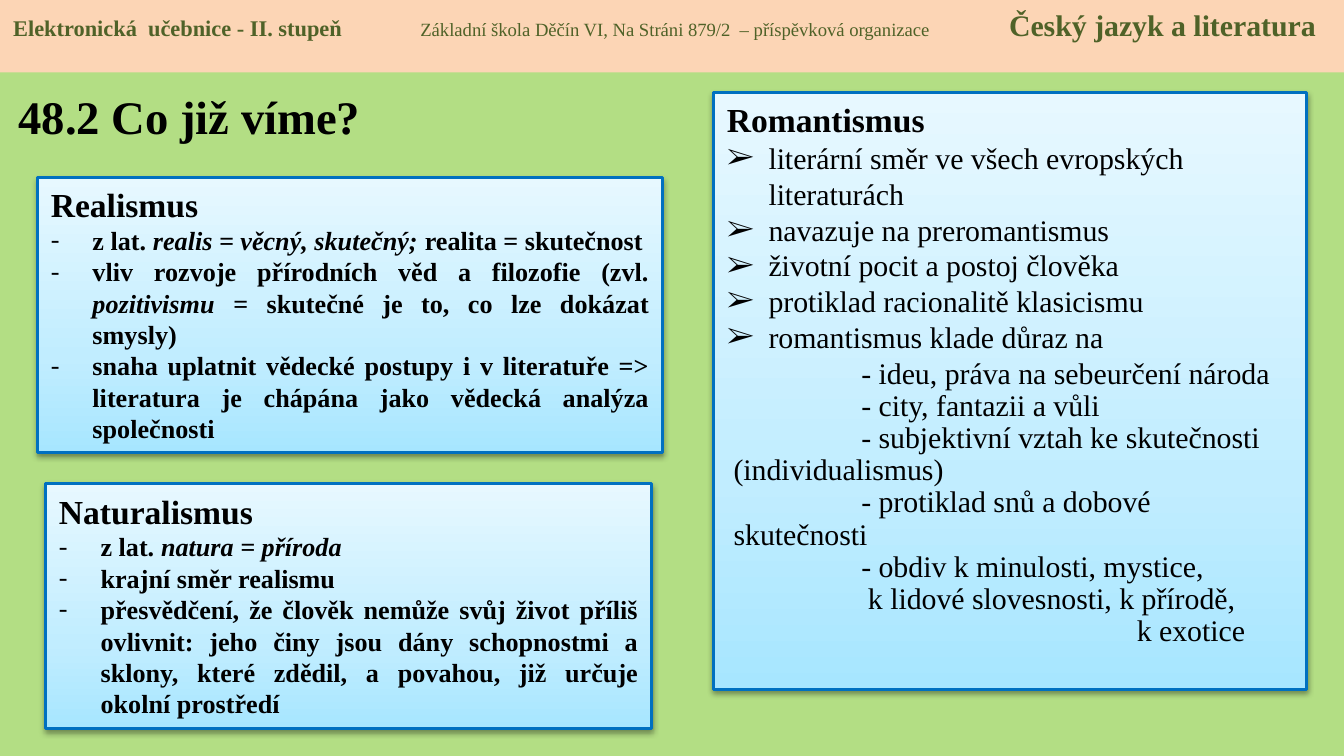
import pptx
import pptx.util
import pptx.dml.color
import pptx.enum.shapes
import pptx.enum.text
import pptx.oxml.ns
import lxml.etree

Inches, Pt = pptx.util.Inches, pptx.util.Pt
qn = pptx.oxml.ns.qn
ALIGN = pptx.enum.text.PP_ALIGN
FONT = "Times New Roman"
COLORS = {"page": "B3DE84", "banner": "FCD5B5", "banner_text": "4F6228",
          "text": "000000", "border": "0070C0", "shadow": "000000"}
CARD_STOPS = [(0, "A7E6FF"), (35, "C1EDFF"), (100, "E7F8FF")]

TITLE = "48.2 Co již víme?"
# text, size, bold
BANNER = [("Elektronická  učebnice - II. stupeň", 12, True),
          ("\tZákladní škola Děčín VI, Na Stráni 879/2  – příspěvková organizace", 10, False),
          ("\tČeský jazyk a literatura", 16, True)]
BANNER_TABS = [3.03, 7.41]

# left and indent are inches; absent keys fall back to plain left-aligned text
STYLES = {
    "heading": {"size": 18, "bold": True},
    "dash": {"size": 14, "bold": True, "left": 0.31, "indent": -0.31,
             "bullet": "-", "align": ALIGN.JUSTIFY},
    "arrow": {"size": 16, "left": 0.31, "indent": -0.31, "bullet": "➢"},
    "first_sub": {"size": 16, "left": 0.05, "indent": 0.95},
    "sub": {"size": 16, "left": 0.05, "indent": 0.95, "spacing": 0.9},
    "sub_more": {"size": 16, "left": 1.05, "spacing": 0.9},
    "sub_last": {"size": 16, "left": 3.05, "spacing": 0.9},
}
# place (left, top, width, height) and paragraphs; every second span is italic
CARDS = [
    ((0.28, 1.32, 4.65, 2.05), [
        ("heading", ["Realismus"]),
        ("dash", ["z lat. ", "realis = věcný, skutečný; ", "realita = skutečnost"]),
        ("dash", ["vliv rozvoje přírodních věd a filozofie (zvl. ", "pozitivismu",
                  " = skutečné je to, co lze dokázat smysly)"]),
        ("dash", ["snaha uplatnit vědecké postupy i v literatuře => "
                  "literatura je chápána jako vědecká analýza společnosti"]),
    ]),
    ((0.34, 3.6, 4.51, 1.82), [
        ("heading", ["Naturalismus"]),
        ("dash", ["z lat. ", "natura = příroda"]),
        ("dash", ["krajní směr realismu"]),
        ("dash", ["přesvědčení, že člověk nemůže svůj život příliš ovlivnit: "
                  "jeho činy jsou dány schopnostmi a sklony, které zdědil, "
                  "a povahou, již určuje okolní prostředí"]),
    ]),
    ((5.31, 0.69, 4.41, 4.44), [
        ("heading", ["Romantismus"]),
        ("arrow", ["literární směr ve všech evropských literaturách"]),
        ("arrow", ["navazuje na preromantismus"]),
        ("arrow", ["životní pocit a postoj člověka"]),
        ("arrow", ["protiklad racionalitě klasicismu"]),
        ("arrow", ["romantismus klade důraz na"]),
        ("first_sub", ["- ideu, práva na sebeurčení národa"]),
        ("sub", ["- city, fantazii a vůli"]),
        ("sub", ["- subjektivní vztah ke skutečnosti (individualismus)"]),
        ("sub", ["- protiklad snů a dobové\vskutečnosti"]),
        ("sub", ["- obdiv k minulosti, mystice,"]),
        ("sub_more", ["k lidové slovesnosti, k přírodě,"]),
        ("sub_last", ["k exotice"]),
    ]),
]


def color(name):
    return pptx.dml.color.RGBColor.from_string(COLORS[name])


def add_xml(parent, tag, **attributes):
    return lxml.etree.SubElement(parent, qn(tag), attributes)


def set_font(para, color_name, size=None, bold=None):
    para.font.name = FONT
    para.font.color.rgb = color(color_name)
    if size:
        para.font.size = Pt(size)
    para.font.bold = bold


def add_rectangle(page, place):
    box = page.shapes.add_shape(pptx.enum.shapes.MSO_SHAPE.RECTANGLE,
                                *map(Inches, place))
    box.shadow.inherit = False
    box.text_frame.word_wrap = True
    box.text_frame.vertical_anchor = pptx.enum.text.MSO_ANCHOR.TOP
    return box


def decorate_card(box):
    """Gives a card its three-stop gradient, border and soft shadow."""
    box.fill.gradient()
    box.fill.gradient_angle = 90
    properties = box.element.spPr
    stops = properties.find(qn("a:gradFill")).find(qn("a:gsLst"))
    for stop in list(stops):
        stops.remove(stop)
    for percent, value in CARD_STOPS:
        stop = add_xml(stops, "a:gs", pos=str(percent * 1000))
        add_xml(stop, "a:srgbClr", val=value)
    box.line.color.rgb = color("border")
    box.line.width = Pt(1.5)
    shadow = add_xml(properties.find(qn("a:effectLst")), "a:outerShdw",
                     blurRad=str(Pt(3.1)), dist=str(Pt(1.6)), dir="5400000",
                     rotWithShape="0")
    shade = add_xml(shadow, "a:srgbClr", val=COLORS["shadow"])
    add_xml(shade, "a:alpha", val="38000")


def write_paragraph(para, style, spans):
    settings = para._p.get_or_add_pPr()
    settings.set("marL", str(Inches(style.get("left", 0))))
    settings.set("indent", str(Inches(style.get("indent", 0))))
    if "bullet" in style:
        add_xml(settings, "a:buFont", typeface=FONT)
        add_xml(settings, "a:buChar", char=style["bullet"])
    para.alignment = style.get("align", ALIGN.LEFT)
    para.line_spacing = style.get("spacing")
    set_font(para, "text", style["size"], style.get("bold", False))
    for number, words in enumerate(spans):
        for part, piece in enumerate(words.split("\v")):
            if part:
                para.add_line_break()
            span = para.add_run()
            span.text = piece
            if number % 2:
                span.font.italic = True


def add_title(page):
    box = page.shapes.add_textbox(*map(Inches, (0.04, 0.54, 2.83, 0.65)))
    box.text_frame.word_wrap = True
    box.text_frame.vertical_anchor = pptx.enum.text.MSO_ANCHOR.MIDDLE
    write_paragraph(box.text_frame.paragraphs[0], {"size": 25, "bold": True}, [TITLE])


def add_banner(page):
    box = add_rectangle(page, (0, 0, 10, 0.54))
    box.fill.solid()
    box.fill.fore_color.rgb = color("banner")
    box.line.fill.background()
    para = box.text_frame.paragraphs[0]
    tabs = add_xml(para._p.get_or_add_pPr(), "a:tabLst")
    for position in BANNER_TABS:
        add_xml(tabs, "a:tab", pos=str(Inches(position)), algn="l")
    para.alignment = ALIGN.LEFT
    set_font(para, "banner_text")
    for words, size, bold in BANNER:
        span = para.add_run()
        span.text = words
        span.font.size = Pt(size)
        span.font.bold = bold


def add_card(page, place, paragraphs):
    box = add_rectangle(page, place)
    decorate_card(box)
    frame = box.text_frame
    for number, (style, spans) in enumerate(paragraphs):
        para = frame.add_paragraph() if number else frame.paragraphs[0]
        write_paragraph(para, STYLES[style], spans)


def main():
    deck = pptx.Presentation()
    deck.slide_width, deck.slide_height = Inches(10), Inches(10 * 9 / 16)
    page = deck.slides.add_slide(deck.slide_layouts[6])
    page.background.fill.solid()
    page.background.fill.fore_color.rgb = color("page")
    add_title(page)
    add_banner(page)
    for place, paragraphs in CARDS:
        add_card(page, place, paragraphs)
    deck.save("out.pptx")


if __name__ == "__main__":
    main()
